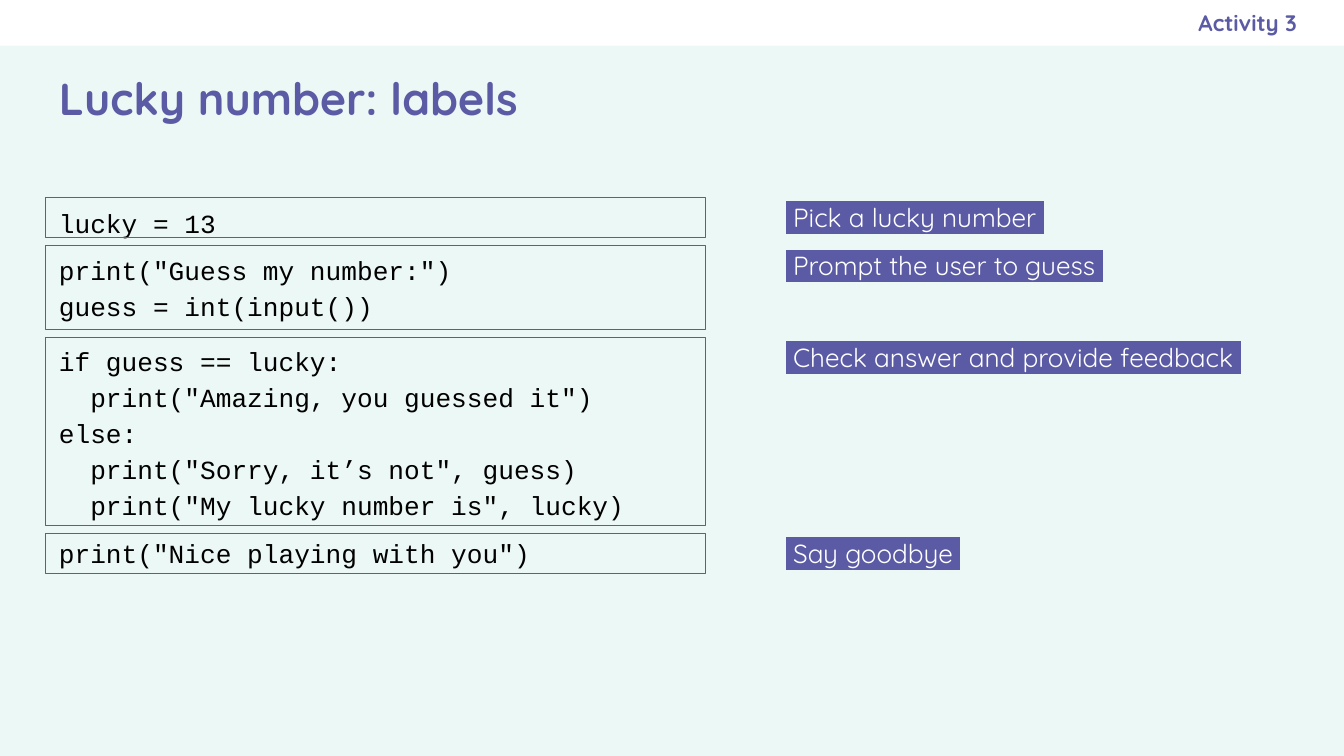
from dataclasses import dataclass

from lxml import etree
from pptx import Presentation
from pptx import util as u
from pptx.dml.color import RGBColor
from pptx.enum import shapes, text
from pptx.oxml.ns import qn


@dataclass(frozen=True)
class Theme:
    background: str = "ECF8F5"
    accent: str = "5B5BA5"
    white: str = "FFFFFF"
    code: str = "000000"
    heading_font: str = "Quicksand"
    code_font: str = "Courier New"
    title_size: float = 24
    body_size: float = 14
    tag_size: float = 12


THEME = Theme()
MARGIN = 24.5
SLIDE_WIDTH, SLIDE_HEIGHT = 720, 405
BAR_HEIGHT = 24.5
COLUMN_LEFT, COLUMN_WIDTH = 414, 280.8
CODE_TOP, CODE_WIDTH, STEP_GAP = 105.8, 353.5, 4.2

STEPS = [
    ("Pick a lucky number", 21.6, 0, ["lucky = 13"]),
    ("Prompt the user to guess", 45, 6, [
        'print("Guess my number:")',
        "guess = int(input())",
    ]),
    ("Check answer and provide feedback", 100.8, 10, [
        "if guess == lucky:",
        '  print("Amazing, you guessed it")',
        "else:",
        '  print("Sorry, it’s not", guess)',
        '  print("My lucky number is", lucky)',
    ]),
    ("Say goodbye", 21.6, 6, ['print("Nice playing with you")']),
]


def color(value):
    return RGBColor.from_string(value)


def add_text_box(slide, left, top, width, height, insets=(7.2, 7.2, 7.2, 7.2),
                 anchor=text.MSO_ANCHOR.TOP):
    shape = slide.shapes.add_textbox(u.Pt(left), u.Pt(top), u.Pt(width), u.Pt(height))
    frame = shape.text_frame
    frame.word_wrap = True
    frame.vertical_anchor = anchor
    (frame.margin_left, frame.margin_top,
     frame.margin_right, frame.margin_bottom) = map(u.Pt, insets)
    return frame


def write(paragraph, content, *, size=THEME.body_size, font=THEME.heading_font,
          fill=THEME.accent, bold=False, highlight=None,
          align=text.PP_ALIGN.LEFT, line_spacing=1.0, space_before=0):
    paragraph.alignment = align
    paragraph.line_spacing = line_spacing
    paragraph.space_before = u.Pt(space_before)
    run = paragraph.add_run()
    run.text = content
    run.font.size = u.Pt(size)
    run.font.bold = bold
    run.font.name = font
    run.font.color.rgb = color(fill)
    if highlight:
        properties = run._r.get_or_add_rPr()
        marker = etree.Element(qn("a:highlight"))
        etree.SubElement(marker, qn("a:srgbClr"), val=highlight)
        properties.find(qn("a:solidFill")).addnext(marker)


def add_rectangle(parent, left, top, width, height, fill=None, line=None):
    shape = parent.shapes.add_shape(
        shapes.MSO_SHAPE.RECTANGLE, u.Pt(left), u.Pt(top), u.Pt(width), u.Pt(height))
    shape.shadow.inherit = False
    if fill:
        shape.fill.solid()
        shape.fill.fore_color.rgb = color(fill)
    else:
        shape.fill.background()
    if line:
        shape.line.color.rgb = color(line)
        shape.line.width = u.Pt(0.75)
    else:
        shape.line.fill.background()


def add_header(slide):
    add_rectangle(slide, 0, 0, SLIDE_WIDTH, BAR_HEIGHT, fill=THEME.white)
    tag = add_text_box(slide, COLUMN_LEFT, 0, COLUMN_WIDTH, BAR_HEIGHT,
                       insets=(7.2, 7.2, 0, 7.2), anchor=text.MSO_ANCHOR.MIDDLE)
    write(tag.paragraphs[0], "Activity 3", size=THEME.tag_size, bold=True,
          align=text.PP_ALIGN.RIGHT)
    title = add_text_box(slide, MARGIN, BAR_HEIGHT, SLIDE_WIDTH - 2 * MARGIN, 55.4,
                         anchor=text.MSO_ANCHOR.MIDDLE)
    write(title.paragraphs[0], "Lucky number: labels", size=THEME.title_size, bold=True)


def add_code(slide):
    frame = add_text_box(slide, MARGIN, 101.5, 348.5, 211)
    paragraph = frame.paragraphs[0]
    for _, _, space_before, lines in STEPS:
        for index, line in enumerate(lines):
            if paragraph.runs:
                paragraph = frame.add_paragraph()
            write(paragraph, line, font=THEME.code_font, fill=THEME.code,
                  line_spacing=1.15, space_before=0 if index else space_before)


def add_steps(slide):
    boxes = slide.shapes.add_group_shape()
    top = CODE_TOP
    for label, height, _, _ in STEPS:
        add_rectangle(boxes, MARGIN, top, CODE_WIDTH, height, line=THEME.accent)
        frame = add_text_box(slide, COLUMN_LEFT, top, COLUMN_WIDTH, 31.7,
                             insets=(7.2, 0, 4.3, 7.2))
        write(frame.paragraphs[0], f" {label} ", fill=THEME.white,
              highlight=THEME.accent, line_spacing=1.13)
        top += height + STEP_GAP


def main():
    presentation = Presentation()
    presentation.slide_width = u.Pt(SLIDE_WIDTH)
    presentation.slide_height = u.Pt(SLIDE_HEIGHT)
    slide = presentation.slides.add_slide(presentation.slide_layouts[6])
    slide.background.fill.solid()
    slide.background.fill.fore_color.rgb = color(THEME.background)
    add_header(slide)
    add_code(slide)
    add_steps(slide)
    presentation.save("out.pptx")


if __name__ == "__main__":
    main()
